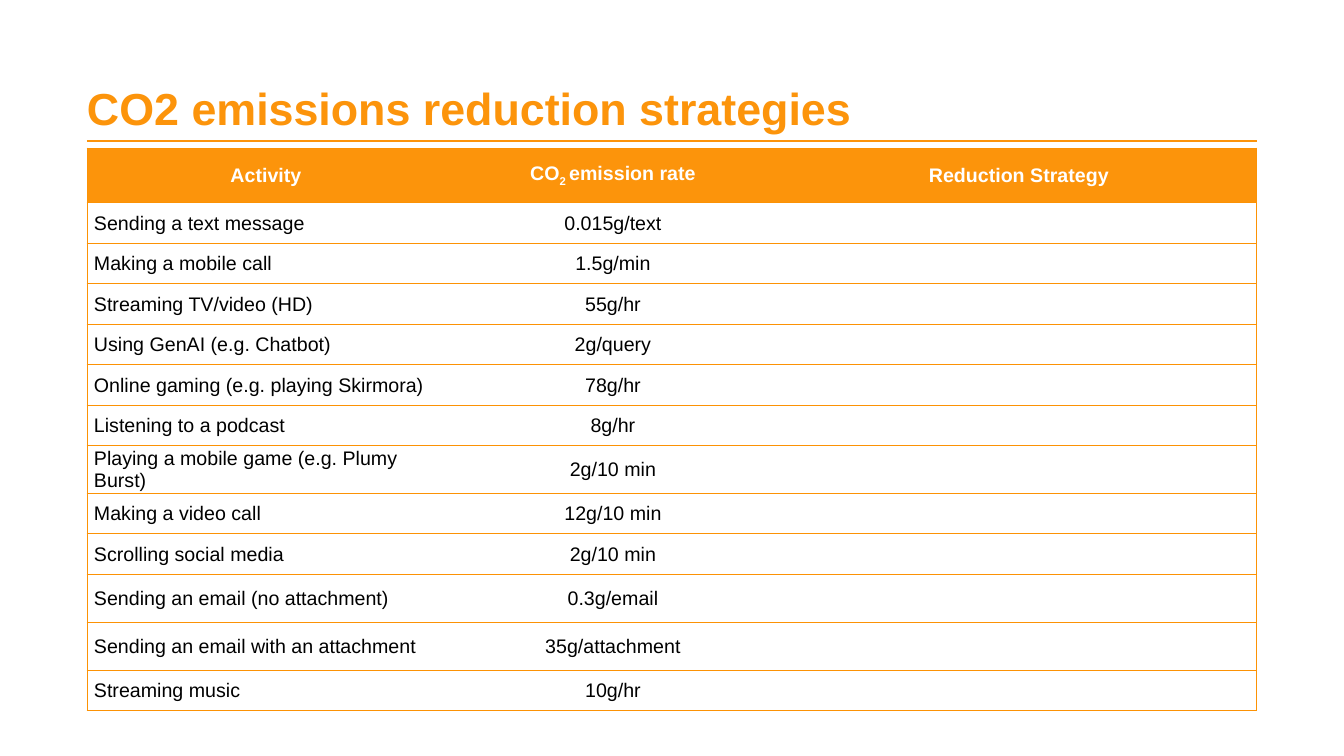
from lxml import etree
from pptx import Presentation
from pptx import util as u
from pptx.dml.color import RGBColor
from pptx.enum import shapes, text
from pptx.oxml import ns

COLORS = {"accent": "FC940B", "border": "FC9205", "header": "FFFFFF", "body": "000000"}
FONT = "Arial"
EMU_PER_PX = 914400 / 100.8

LEFT, WIDTH = 87, 1170
COLUMN_WIDTHS = [358, 336, 476]
ROW_HEIGHTS = [55, 41, 40, 41, 40, 41, 40, 48, 40, 41, 48, 48, 40]
HEADINGS = [
    [("Activity", 0)],
    [("CO", 0), ("2 ", -25000), ("emission rate", 0)],
    [("Reduction Strategy", 0)],
]
ACTIVITIES = [
    ("Sending a text message", "0.015g/text"),
    ("Making a mobile call", "1.5g/min"),
    ("Streaming TV/video (HD)", "55g/hr"),
    ("Using GenAI (e.g. Chatbot)", "2g/query"),
    ("Online gaming (e.g. playing Skirmora)", "78g/hr"),
    ("Listening to a podcast", "8g/hr"),
    ("Playing a mobile game (e.g. Plumy Burst)", "2g/10 min"),
    ("Making a video call", "12g/10 min"),
    ("Scrolling social media", "2g/10 min"),
    ("Sending an email (no attachment)", "0.3g/email"),
    ("Sending an email with an attachment", "35g/attachment"),
    ("Streaming music", "10g/hr"),
]


def px(length):
    return u.Emu(round(length * EMU_PER_PX))


def rgb(name):
    return RGBColor.from_string(COLORS[name])


def add_run(paragraph, wording, size, color, bold=False, baseline=0):
    run = paragraph.add_run()
    run.text = wording
    run.font.name = FONT
    run.font.size = u.Pt(size)
    run.font.bold = bold
    run.font.color.rgb = rgb(color)
    if baseline:
        run._r.get_or_add_rPr().set("baseline", str(baseline))


def set_title(slide, wording):
    title = slide.shapes.title
    title.left, title.top, title.width, title.height = px(LEFT), px(79), px(WIDTH), px(58)
    frame = title.text_frame
    frame.margin_left = frame.margin_right = frame.margin_top = frame.margin_bottom = 0
    frame.vertical_anchor = text.MSO_ANCHOR.MIDDLE
    frame.word_wrap = True
    frame.auto_size = text.MSO_AUTO_SIZE.NONE
    heading = frame.paragraphs[0]
    heading.alignment = text.PP_ALIGN.LEFT
    add_run(heading, wording, 32, "accent", bold=True)


def add_rule(slide, y):
    rule = slide.shapes.add_connector(
        shapes.MSO_CONNECTOR.STRAIGHT, px(LEFT), px(y), px(LEFT + WIDTH), px(y))
    rule.line.color.rgb = rgb("accent")
    rule.line.width = u.Pt(1.5)
    etree.SubElement(rule._element.spPr, ns.qn("a:effectLst"))


def set_borders(cell, sides):
    properties = cell._tc.get_or_add_tcPr()
    for side in "LRTB":
        border = etree.SubElement(properties, ns.qn(f"a:ln{side}"), w=str(u.Pt(0.75)))
        if side in sides:
            fill = etree.SubElement(border, ns.qn("a:solidFill"))
            etree.SubElement(fill, ns.qn("a:srgbClr"), val=COLORS["border"])
        else:
            etree.SubElement(border, ns.qn("a:noFill"))


def format_cell(cell, column, is_header):
    sides = "TB" + {0: "L", len(COLUMN_WIDTHS) - 1: "R"}.get(column, "")
    set_borders(cell, sides)
    cell.vertical_anchor = text.MSO_ANCHOR.MIDDLE
    if is_header:
        cell.fill.solid()
        cell.fill.fore_color.rgb = rgb("accent")
    else:
        cell.fill.background()
        cell.margin_left = cell.margin_right = px(7)
        cell.margin_top = cell.margin_bottom = 0
    centred = is_header or column > 0
    cell.text_frame.paragraphs[0].alignment = (
        text.PP_ALIGN.CENTER if centred else text.PP_ALIGN.LEFT)


def add_emissions_table(slide):
    frame = slide.shapes.add_table(
        len(ROW_HEIGHTS), len(COLUMN_WIDTHS),
        px(LEFT), px(148), px(WIDTH), px(sum(ROW_HEIGHTS)))
    table = frame.table
    table.horz_banding = False
    for column, width in zip(table.columns, COLUMN_WIDTHS):
        column.width = px(width)
    for row, height in zip(table.rows, ROW_HEIGHTS):
        row.height = px(height)
    rows = [HEADINGS] + [[[(entry, 0)] for entry in activity] + [[]] for activity in ACTIVITIES]
    for row_index, entries in enumerate(rows):
        is_header = row_index == 0
        for column, runs in enumerate(entries):
            cell = table.cell(row_index, column)
            format_cell(cell, column, is_header)
            for wording, baseline in runs:
                add_run(cell.text_frame.paragraphs[0], wording, 14,
                        "header" if is_header else "body", is_header, baseline)


def main():
    deck = Presentation()
    deck.slide_width, deck.slide_height = px(1344), px(756)
    slide = deck.slides.add_slide(deck.slide_layouts[5])
    add_rule(slide, 141)
    set_title(slide, "CO2 emissions reduction strategies")
    add_emissions_table(slide)
    deck.save("out.pptx")


if __name__ == "__main__":
    main()
